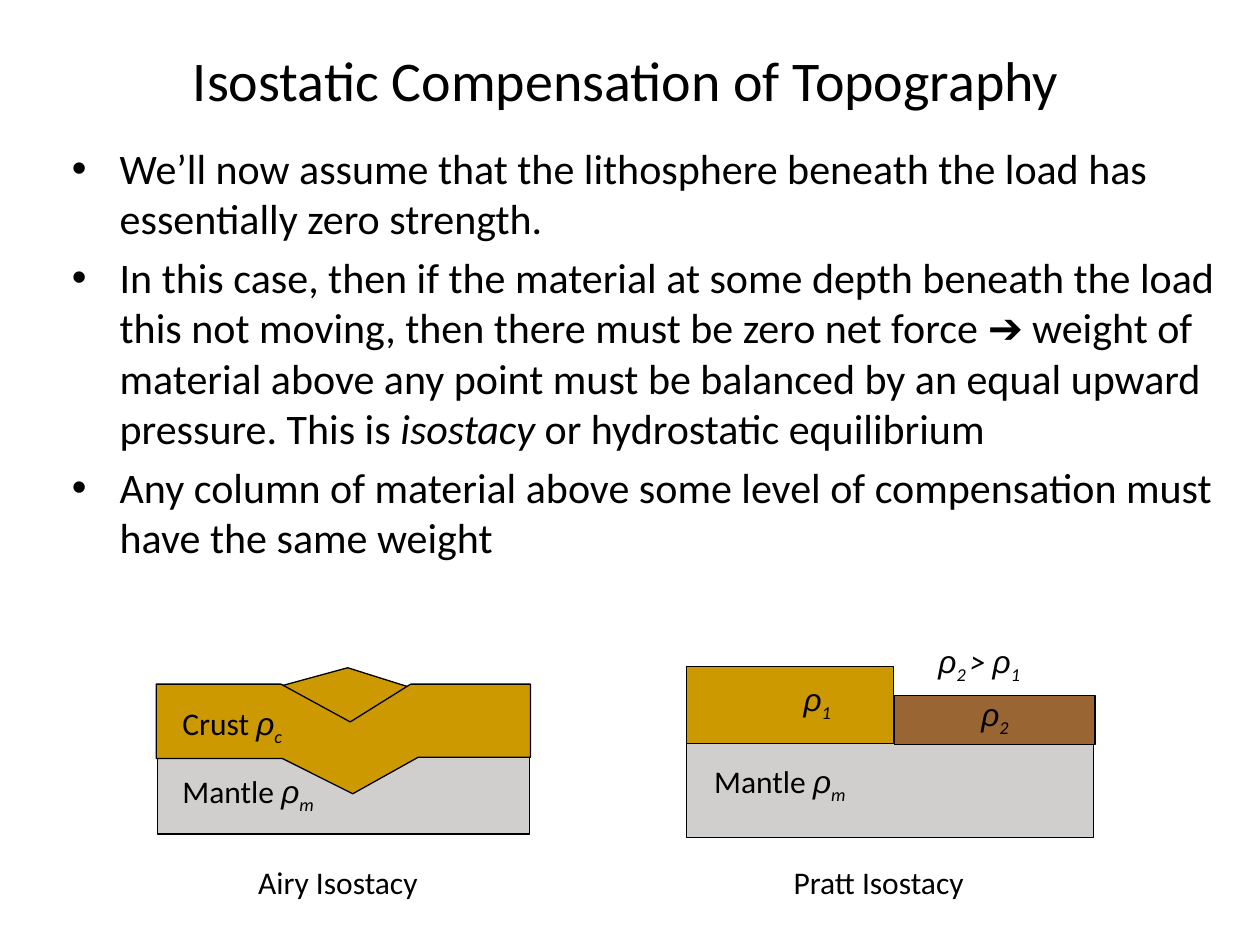
from pptx import Presentation
from pptx import util as u
from pptx.dml import color
from pptx.enum import shapes, text

COLORS = {"ink": "000000", "crust": "CC9900", "dense": "996633", "mantle": "D0CFCE"}
BULLETS = [
    [("We’ll now assume that the lithosphere beneath the load has essentially zero strength.", False)],
    [("In this case, then if the material at some depth beneath the load this not moving, "
      "then there must be zero net force ➔ weight of material above any point must be "
      "balanced by an equal upward pressure. This is ", False),
     ("isostacy ", True), ("or hydrostatic equilibrium", False)],
    [("Any column of material above some level of compensation must have the same weight", False)],
]
MOUNTAIN = [(0.86, 0.18), (1.52, 0), (2.06, 0.17), (2.07, 0.57), (0.84, 0.52)]
CRUST = [(0, 0.13), (0.99, 0.13), (1.54, 0.43), (2.02, 0.13), (2.97, 0.13),
         (2.97, 0.71), (2.08, 0.71), (1.56, 1), (1, 0.72), (0, 0.72)]


def rgb(name):
    """Return the named palette colour."""
    return color.RGBColor.from_string(COLORS[name])


def place(sp, x, y, w, h):
    """Move and size a shape, in inches."""
    sp.left, sp.top, sp.width, sp.height = map(u.Inches, (x, y, w, h))


def add_run(p, words, size, italic=False, font="Calibri", subscript=False):
    """Append one formatted run to a paragraph."""
    r = p.add_run()
    r.text = words
    f = r.font
    f.name, f.size, f.italic = font, u.Pt(size), italic
    f.color.rgb = rgb("ink")
    if subscript:
        r._r.get_or_add_rPr().set("baseline", "-25000")


def paint(sp, fill):
    """Give a rock body its fill and thin outline."""
    sp.shadow.inherit = False
    sp.fill.solid()
    sp.fill.fore_color.rgb = rgb(fill)
    sp.line.color.rgb = rgb("ink")
    sp.line.width = u.Pt(0.75)


def add_block(s, x, y, w, h, fill):
    """Add a rectangular rock body."""
    sp = s.shapes.add_shape(shapes.MSO_SHAPE.RECTANGLE, *map(u.Inches, (x, y, w, h)))
    paint(sp, fill)


def add_outline(s, left, top, points, fill):
    """Add a polygonal rock body from points relative to a corner."""
    pts = [(u.Inches(left + x), u.Inches(top + y)) for x, y in points]
    fb = s.shapes.build_freeform(*pts[0])
    fb.add_line_segments(pts[1:], close=True)
    paint(fb.convert_to_shape(), fill)


def add_label(s, x, y, w, *parts):
    """Add a one-line label; a pair (before, index) ends in a density symbol."""
    tb = s.shapes.add_textbox(*map(u.Inches, (x, y, w, 0.4)))
    tf = tb.text_frame
    tf.word_wrap = False
    tf.auto_size = text.MSO_AUTO_SIZE.SHAPE_TO_FIT_TEXT
    p = tf.paragraphs[0]
    for before, index in parts:
        if before:
            add_run(p, before, 18, italic=before == "> ")
        if index:
            add_run(p, "ρ", 18, True, "Arial")
            add_run(p, index, 18, True, subscript=True)


def fill_title(sp, x, y, w, h):
    """Place and write the slide title."""
    place(sp, x, y, w, h)
    tf = sp.text_frame
    tf.vertical_anchor = text.MSO_ANCHOR.MIDDLE
    p = tf.paragraphs[0]
    p.alignment = text.PP_ALIGN.CENTER
    add_run(p, "Isostatic Compensation of Topography", 32)


def fill_body(sp, x, y, w, h):
    """Place and write the bulleted list."""
    place(sp, x, y, w, h)
    tf = sp.text_frame
    tf.auto_size = text.MSO_AUTO_SIZE.NONE
    for i, runs in enumerate(BULLETS):
        p = tf.paragraphs[0] if i == 0 else tf.add_paragraph()
        pPr = p._p.get_or_add_pPr()
        pPr.set("marL", str(u.Inches(0.38)))
        pPr.set("indent", str(u.Inches(-0.38)))
        for words, italic in runs:
            add_run(p, words, 24, italic)


def draw_airy(s, x, y):
    """Draw the Airy model: one crust density with a deep root."""
    add_outline(s, x, y, MOUNTAIN, "crust")
    add_block(s, x + 0.01, y + 0.71, 2.95, 0.61, "mantle")
    add_outline(s, x, y, CRUST, "crust")
    add_label(s, x + 0.11, y + 0.24, 1.17, ("Crust ", "c"))
    add_label(s, x + 0.11, y + 0.78, 1.34, ("Mantle ", "m"))
    add_label(s, x + 0.71, y + 1.5, 1.49, ("Airy Isostacy", ""))


def draw_pratt(s, x, y):
    """Draw the Pratt model: columns of different density."""
    add_block(s, x, y + 0.8, 3.23, 0.8, "mantle")
    add_block(s, x, y + 0.24, 1.64, 0.61, "crust")
    add_block(s, x + 1.65, y + 0.47, 1.59, 0.39, "dense")
    add_label(s, x + 0.83, y + 0.3, 0.46, ("", "1"))
    add_label(s, x + 0.12, y + 0.95, 1.29, ("Mantle ", "m"))
    add_label(s, x + 2.24, y + 0.42, 0.46, ("", "2"))
    add_label(s, x + 1.9, y, 0.9, ("", "2 "), ("> ", "1"))
    add_label(s, x + 0.75, y + 1.75, 1.58, ("Pratt Isostacy", ""))


def main():
    """Build and save the slide."""
    prs = Presentation()
    prs.slide_width, prs.slide_height = u.Inches(10), u.Inches(7.5)
    s = prs.slides.add_slide(prs.slide_layouts[1])
    fill_title(s.shapes.title, 0.47, 0, 9, 1.25)
    fill_body(s.placeholders[1], 0.47, 1.08, 9.34, 3.7)
    draw_airy(s, 1.24, 5.3)
    draw_pratt(s, 5.45, 5.05)
    prs.save("out.pptx")


if __name__ == "__main__":
    main()
